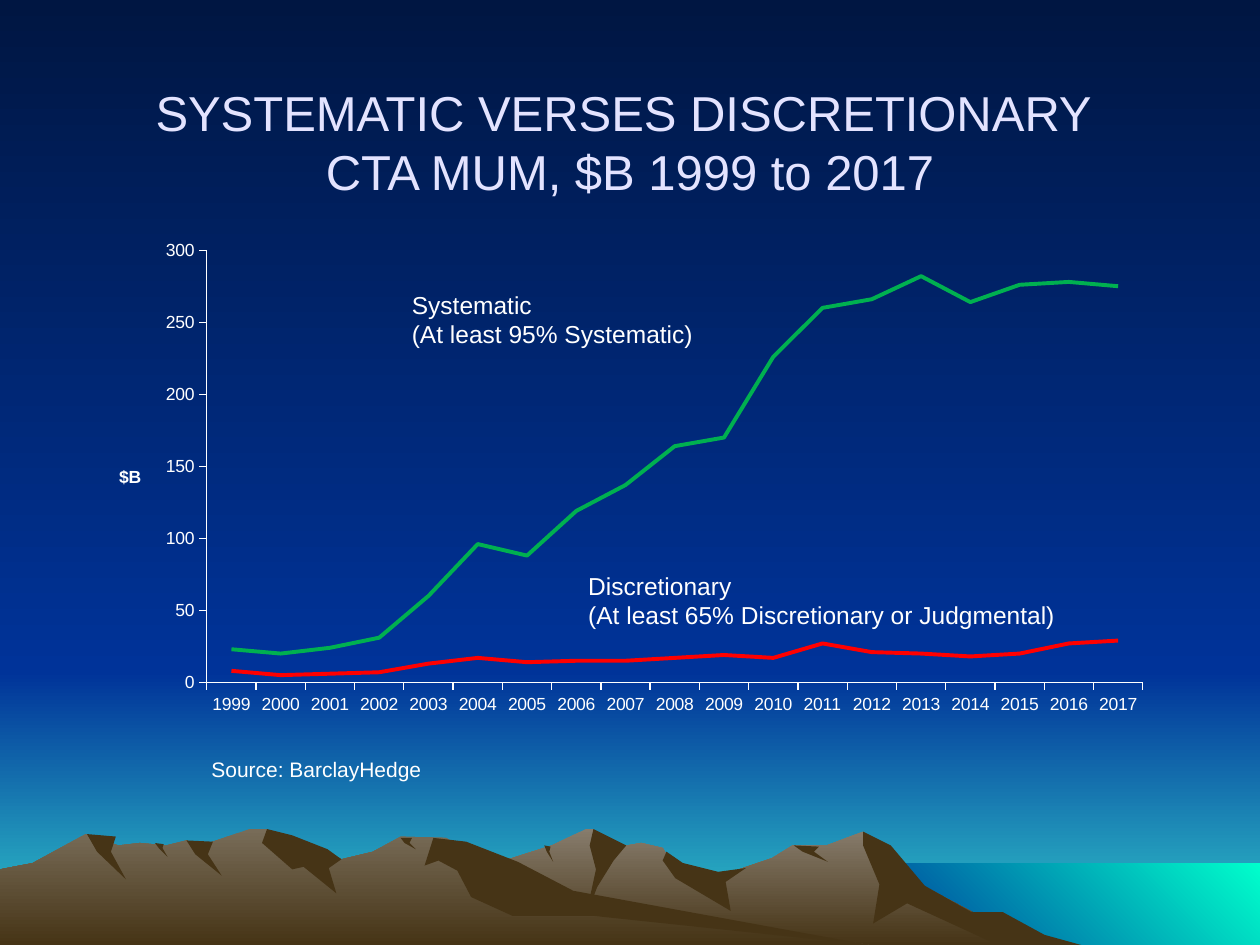
from dataclasses import dataclass

from pptx import Presentation
from pptx.chart.data import CategoryChartData
from pptx.dml.color import RGBColor
from pptx.enum.chart import XL_CHART_TYPE, XL_TICK_MARK
from pptx.enum.text import MSO_ANCHOR, PP_ALIGN
from pptx.oxml import parse_xml
from pptx.oxml.ns import nsdecls, qn
from pptx.util import Inches, Pt

LINE = XL_CHART_TYPE.LINE
OUTSIDE, NO_TICK = XL_TICK_MARK.OUTSIDE, XL_TICK_MARK.NONE
TOP, MIDDLE, BOTTOM = MSO_ANCHOR.TOP, MSO_ANCHOR.MIDDLE, MSO_ANCHOR.BOTTOM
LEFT, CENTER = PP_ALIGN.LEFT, PP_ALIGN.CENTER

COLUMNS, ROWS = 1000, 750
HORIZON, SHORE, SEA_LEVEL = 533, 683, 685
DOWN, UP_RIGHT = 270, 45
COLORS = {
    "night": "001642", "sky": "003399", "haze": "33CCCC", "sea": "00FFCC",
    "peak": "877C6C", "slope": "786C58", "earth": "463416",
    "title": "E3E3FF", "text": "FFFFFF",
    "systematic": "00B050", "discretionary": "FF0000",
}
YEARS = range(1999, 2018)
FUNDS = {
    "systematic": [23, 20, 24, 31, 60, 96, 88, 119, 137, 164, 170, 226, 260, 266, 282,
                   264, 276, 278, 275],
    "discretionary": [8, 5, 6, 7, 13, 17, 14, 15, 15, 17, 19, 17, 27, 21, 20, 18, 20,
                      27, 29],
}
GULLY = [(0, 0), (0.75, 0.05), (0.6, 0.4), (1, 1), (0.25, 0.4)]


@dataclass
class Mountain:
    """A skyline from left to right, its shaded faces, and frames for its small gullies."""

    light: str
    skyline: list
    faces: dict
    gullies: list

    def outline(self):
        return self.skyline + [(self.skyline[end][0], ROWS) for end in (-1, 0)]

    def shadows(self):
        yield from self.faces.values()
        for left, top, width, height in self.gullies:
            yield [(round(left + x * width), round(top + y * height)) for x, y in GULLY]


FAR_MOUNTAIN = Mountain(
    light="peak",
    skyline=[(258, 750), (327, 709), (394, 685), (438, 671), (465, 658), (471, 658),
             (486, 673), (509, 669), (526, 673), (536, 690), (566, 697), (613, 681),
             (629, 671), (656, 671), (685, 660), (702, 671), (723, 698), (821, 750)],
    faces={
        "east": [(685, 660), (707, 671), (734, 703), (771, 724), (796, 724), (829, 742),
                 (858, 750), (792, 750), (720, 717), (693, 733), (698, 702), (685, 671)],
        "summit": [(471, 658), (497, 671), (487, 683), (474, 704), (465, 727), (473, 690),
                   (468, 671)],
        "saddle": [(529, 676), (542, 685), (570, 692), (592, 689), (576, 700), (580, 723),
                   (536, 697), (526, 683)],
    },
    gullies=[(630, 671, 27, 13), (432, 671, 7, 13)],
)
NEAR_MOUNTAIN = Mountain(
    light="slope",
    skyline=[(0, 690), (26, 685), (68, 662), (94, 671), (111, 669), (132, 671), (148, 667),
             (160, 671), (198, 658), (212, 658), (236, 681), (260, 676), (271, 682),
             (296, 676), (318, 664), (354, 665), (432, 712), (690, 750)],
    faces={
        "west": [(212, 658), (232, 663), (260, 674), (271, 682), (261, 689), (267, 709),
                 (241, 688), (232, 690), (208, 669)],
        "east": [(344, 665), (370, 668), (411, 684), (455, 707), (690, 750), (472, 727),
                 (407, 727), (374, 712), (363, 691), (348, 683), (337, 687)],
    },
    gullies=[(318, 665, 12, 9), (148, 667, 28, 28), (123, 669, 10, 11), (69, 662, 31, 36)],
)


def rgb(name):
    return RGBColor.from_string(COLORS[name])


def band(left, top, right, bottom):
    return [(left, top), (right, top), (right, bottom), (left, bottom)]


def place(parent, index, **shares):
    for old in parent.findall(qn("c:layout")):
        parent.remove(old)
    target = '<c:layoutTarget val="inner"/>' if "w" in shares else ""
    modes = "".join(f'<c:{axis}Mode val="edge"/>' for axis in "xy")
    values = "".join(f'<c:{key} val="{share}"/>' for key, share in shares.items())
    parent.insert(index, parse_xml(
        f'<c:layout {nsdecls("c")}><c:manualLayout>{target}{modes}{values}'
        "</c:manualLayout></c:layout>"))


def clear_fill():
    return parse_xml(f'<c:spPr {nsdecls("c", "a")}><a:noFill/><a:ln><a:noFill/></a:ln></c:spPr>')


class Landscape:
    """Draws styled elements on one slide, measured in grid columns and rows."""

    def __init__(self, deck, font):
        self.slide = deck.slides.add_slide(deck.slide_layouts[6])
        self.column = deck.slide_width // COLUMNS
        self.row = deck.slide_height // ROWS
        self.font = font

    def frame(self, left, top, width, height):
        return left * self.column, top * self.row, width * self.column, height * self.row

    def style_font(self, font, size, color="text"):
        font.name, font.size = self.font, Pt(size)
        font.color.rgb = rgb(color)

    def paint(self, fill, colors, angle=DOWN):
        if len(colors) == 1:
            fill.solid()
            fill.fore_color.rgb = rgb(colors[0])
            return
        fill.gradient()
        fill.gradient_angle = angle
        for stop, name in zip(fill.gradient_stops, colors):
            stop.color.rgb = rgb(name)

    def area(self, points, *colors, angle=DOWN):
        builder = self.slide.shapes.build_freeform(*points[0], scale=(self.column, self.row))
        builder.add_line_segments(points[1:], close=True)
        area = builder.convert_to_shape()
        area.shadow.inherit = False
        area.line.fill.background()
        self.paint(area.fill, colors, angle)

    def mountain(self, mountain):
        self.area(mountain.outline(), mountain.light, "earth")
        for shadow in mountain.shadows():
            self.area(shadow, "earth")

    def text(self, frame, paragraphs, size, color="text", anchor=TOP, align=LEFT, wrap=True):
        body = self.slide.shapes.add_textbox(*self.frame(*frame)).text_frame
        body.word_wrap = wrap
        body.vertical_anchor = anchor
        for index, lines in enumerate(paragraphs):
            paragraph = body.add_paragraph() if index else body.paragraphs[0]
            paragraph.alignment = align
            for number, line in enumerate(lines):
                if number:
                    paragraph.add_line_break()
                run = paragraph.add_run()
                run.text = line
                self.style_font(run.font, size, color)

    def line_chart(self, frame, categories, series, unit, top_value, step):
        data = CategoryChartData()
        data.categories = categories
        for name, values in series.items():
            data.add_series(name.capitalize(), values)
        chart = self.slide.shapes.add_chart(LINE, *self.frame(*frame), data).chart
        chart.has_legend = chart.has_title = False
        self.style_font(chart.font, 10)
        chart.plots[0].vary_by_categories = False
        for name, line in zip(series, chart.plots[0].series):
            line.smooth = False
            line.format.line.color.rgb = rgb(name)
            line.format.line.width = Pt(2.25)
        amount = chart.value_axis
        for axis in (chart.category_axis, amount):
            axis.has_major_gridlines = False
            axis.major_tick_mark, axis.minor_tick_mark = OUTSIDE, NO_TICK
            axis.format.line.color.rgb = rgb("text")
            axis.format.line.width = Pt(0.75)
        amount.minimum_scale, amount.maximum_scale, amount.major_unit = 0, top_value, step
        heading = amount.axis_title.text_frame
        run = heading.paragraphs[0].add_run()
        run.text = unit
        run.font.bold = True
        self.style_font(run.font, 10)
        body = heading._txBody.find(qn("a:bodyPr"))
        body.set("rot", "0")
        body.set("vert", "horz")
        place(amount.axis_title._element, 1, x=0.02, y=0.47)
        root = chart._chartSpace.find(qn("c:chart"))
        plot_area = root.find(qn("c:plotArea"))
        place(plot_area, 0, x=0.105, y=0.04, w=0.875, h=0.875)
        plot_area.append(clear_fill())
        root.addnext(clear_fill())


def main():
    deck = Presentation()
    deck.slide_width, deck.slide_height = Inches(10), Inches(7.5)
    scene = Landscape(deck, "Arial")
    scene.paint(scene.slide.background.fill, ("night", "sky"))
    scene.area(band(0, HORIZON, COLUMNS, ROWS), "sky", "haze")
    scene.area(band(0, 0, COLUMNS, HORIZON), "night", "sky")
    scene.area(band(SHORE, SEA_LEVEL, COLUMNS, ROWS), "sky", "sea", angle=UP_RIGHT)
    for mountain in (FAR_MOUNTAIN, NEAR_MOUNTAIN):
        scene.mountain(mountain)
    scene.text((50, 50, 900, 125),
               [["SYSTEMATIC VERSES DISCRETIONARY ", "CTA MUM, $B 1999 to 2017"]],
               28, "title", MIDDLE, CENTER)
    scene.text((158, 583, 233, 42), [["Source: BarclayHedge"]], 12, anchor=BOTTOM)
    scene.text((457, 448, 467, 57),
               [["Discretionary"], ["(At least 65% Discretionary or Judgmental)"]], 14)
    scene.text((317, 225, 249, 67),
               [["Systematic"], ["(At least 95% Systematic)"]], 14, wrap=False)
    scene.line_chart((75, 183, 849, 392), [str(year) for year in YEARS], FUNDS,
                     "$B", top_value=300, step=50)
    deck.save("out.pptx")


if __name__ == "__main__":
    main()
